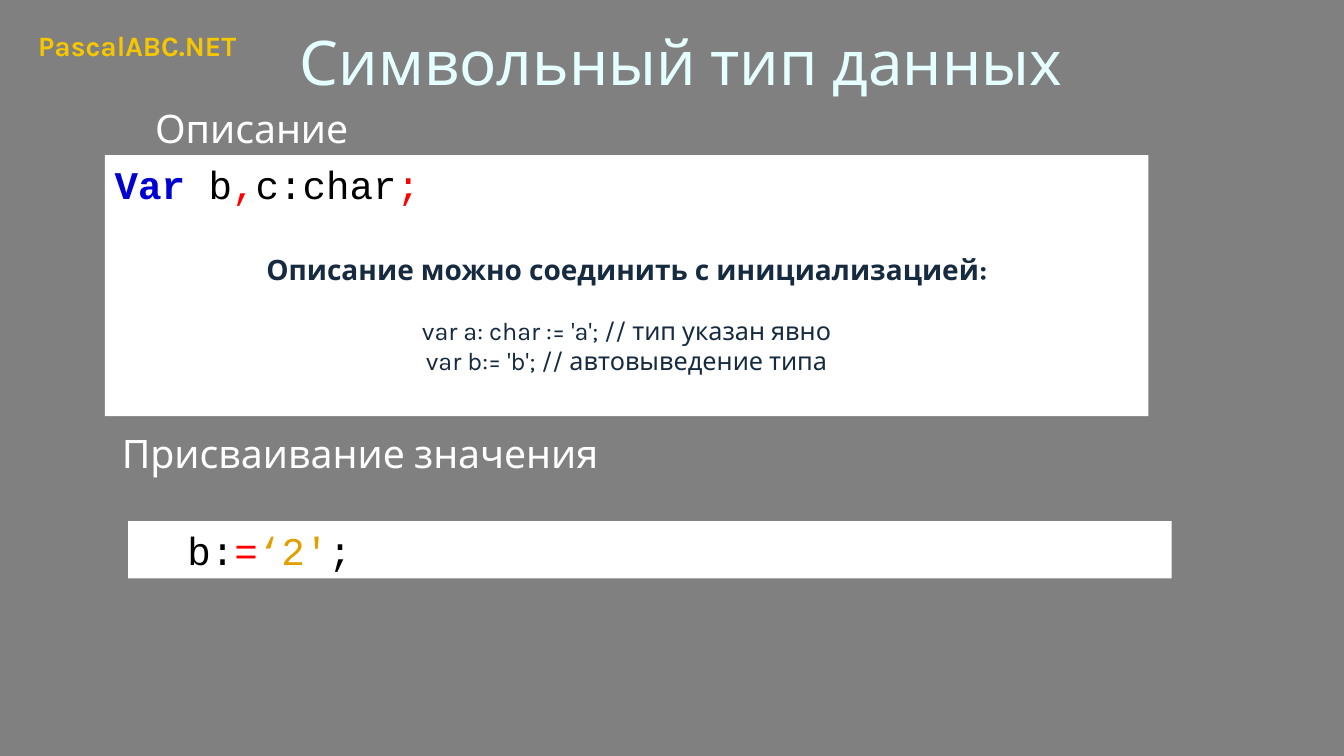
from dataclasses import dataclass

from pptx import Presentation
from pptx.dml.color import RGBColor
from pptx.enum.shapes import MSO_SHAPE
from pptx.enum.text import MSO_ANCHOR, PP_ALIGN
from pptx.oxml.ns import qn
from pptx.util import Inches, Length, Pt

RECTANGLE = MSO_SHAPE.RECTANGLE
TOP, MIDDLE = MSO_ANCHOR.TOP, MSO_ANCHOR.MIDDLE
LEFT, CENTER = PP_ALIGN.LEFT, PP_ALIGN.CENTER

WIDTH, HEIGHT = Inches(13.33), Inches(7.5)
CODE_FONT, TEXT_FONT = "Courier New", "Karla"
GRAY, WHITE, BLACK = "808080", "FFFFFF", "000000"
ICE, NAVY, GOLD = "E5FFFF", "162A40", "F6C700"
KEYWORD, SYMBOL, LITERAL = "0000D0", "FF0000", "E0A000"


@dataclass(frozen=True)
class Span:
    text: str
    color: str
    bold: bool = False


@dataclass(frozen=True)
class Para:
    spans: tuple[Span, ...]
    size: int
    font: str = TEXT_FONT
    align: PP_ALIGN = LEFT
    before: int = 0
    indent: float = 0


@dataclass(frozen=True)
class Box:
    left: float
    top: float
    width: float
    height: float
    paras: tuple[Para, ...]
    anchor: MSO_ANCHOR = TOP
    fill: str = ""
    wrap: bool = True


def color_of(code: str) -> RGBColor:
    return RGBColor.from_string(code)


def share(percent: float, whole: Length) -> int:
    return round(whole * percent / 100)


def heading(left: float, top: float, text: str) -> Box:
    para = Para((Span(text, WHITE),), 28)
    return Box(left, top, 53.34, 10.67, (para,), MIDDLE)


def panel(left: float, top: float, height: float, *paras: Para) -> Box:
    return Box(left, top, 77.64, height, paras, fill=WHITE)


def note(text: str, size: int, before: int = 0, bold: bool = False) -> Para:
    return Para((Span(text, NAVY, bold),), size, align=CENTER, before=before)


def code(*spans: Span, indent: float = 0) -> Para:
    return Para(spans, 28, CODE_FONT, indent=indent)


BOXES = (
    Box(5.7, -2, 90, 20, (Para((Span("Символьный тип данных", ICE),), 44, align=CENTER),), MIDDLE),
    panel(
        7.8, 20.53, 34.53,
        code(Span("Var ", KEYWORD, True), Span("b", BLACK), Span(",", SYMBOL),
             Span("c:char", BLACK), Span(";", SYMBOL)),
        note("Описание можно соединить с инициализацией:", 20, before=32, bold=True),
        note("var a: char := 'a'; // тип указан явно", 18, before=21),
        note("var b:= 'b'; // автовыведение типа", 18),
    ),
    heading(10.8, 11.6, "Описание"),
    panel(
        9.53, 68.93, 7.6,
        code(Span("b:", BLACK), Span("=", SYMBOL), Span("‘2'", LITERAL),
             Span(";", BLACK), indent=0.49),
    ),
    heading(8.33, 54.53, "Присваивание значения"),
    Box(2.1, 3.07, 17.4, 5.87, (Para((Span("PascalABC.NET", GOLD, True),), 20),), wrap=False),
)


def draw_box(page, box: Box) -> None:
    place = (share(box.left, WIDTH), share(box.top, HEIGHT),
             share(box.width, WIDTH), share(box.height, HEIGHT))
    if box.fill:
        shape = page.shapes.add_shape(RECTANGLE, *place)
        shape.shadow.inherit = False
        shape.fill.solid()
        shape.fill.fore_color.rgb = color_of(box.fill)
        shape.line.fill.background()
    else:
        shape = page.shapes.add_textbox(*place)
    frame = shape.text_frame
    frame.word_wrap = box.wrap
    frame.vertical_anchor = box.anchor
    for index, para in enumerate(box.paras):
        paragraph = frame.add_paragraph() if index else frame.paragraphs[0]
        draw_para(paragraph, para)


def draw_para(paragraph, para: Para) -> None:
    paragraph.alignment = para.align
    if para.before:
        paragraph.space_before = Pt(para.before)
    if para.indent:
        properties = paragraph._p.get_or_add_pPr()
        properties.set("marL", "0")
        properties.set("indent", str(Inches(para.indent)))
    for span in para.spans:
        run = paragraph.add_run()
        run.text = span.text
        run.font.name = para.font
        run.font.size = Pt(para.size)
        run.font.bold = span.bold
        run.font.color.rgb = color_of(span.color)
        for tag in ("a:ea", "a:cs"):
            face = run.font._element.makeelement(qn(tag), {"typeface": para.font})
            run.font._element.append(face)


def main() -> None:
    deck = Presentation()
    deck.slide_width, deck.slide_height = WIDTH, HEIGHT
    page = deck.slides.add_slide(deck.slide_layouts[6])
    page.background.fill.solid()
    page.background.fill.fore_color.rgb = color_of(GRAY)
    for box in BOXES:
        draw_box(page, box)
    deck.save("out.pptx")


if __name__ == "__main__":
    main()
